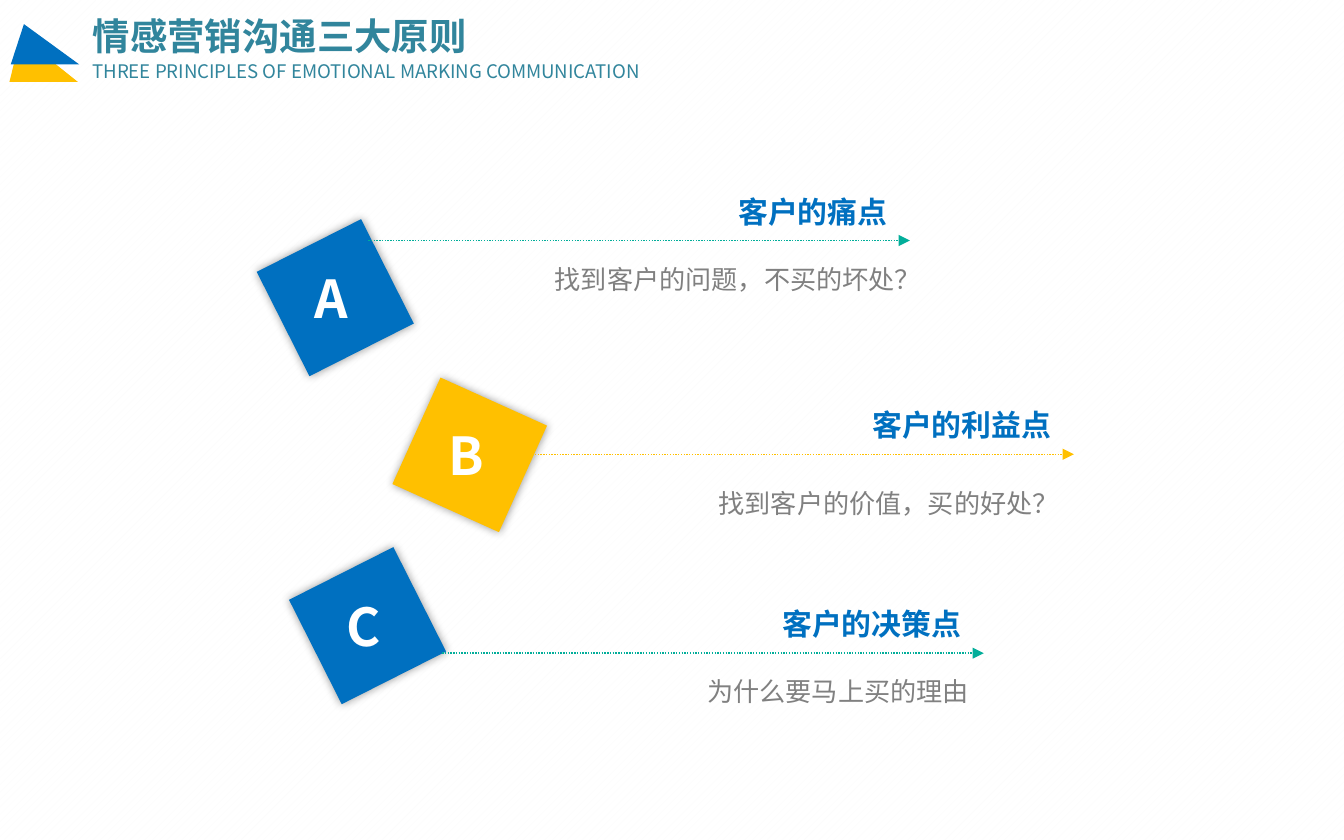
from pptx import Presentation
from pptx.util import Inches, Pt
from pptx.dml.color import RGBColor
from pptx.enum.dml import MSO_LINE, MSO_PATTERN
from pptx.enum.shapes import MSO_CONNECTOR, MSO_SHAPE
from pptx.enum.text import MSO_ANCHOR, MSO_AUTO_SIZE, PP_ALIGN
from pptx.oxml.ns import qn
from lxml.etree import SubElement

# Content
TITLE = "情感营销沟通三大原则"
SUB = "THREE PRINCIPLES OF EMOTIONAL MARKING COMMUNICATION"
# letter, head, note, colours of tile and arrow, tile corner, tilt,
# arrow start, gap from arrow to note
ITEMS = [
    ("A", "客户的痛点", "找到客户的问题，不买的坏处？",
     "blue", "green", (2.06, 1.78), -26.8, (2.74, 1.79), 0),
    ("B", "客户的利益点", "找到客户的价值，买的好处？",
     "gold", "gold", (3.06, 2.95), 24.3, (3.96, 3.38), 0.08),
    ("C", "客户的决策点", "为什么要马上买的理由",
     "blue", "green", (2.3, 4.22), -26.8, (3.29, 4.86), 0),
]
# colour, left, top, width, height, apex
MARKS = [
    ("gold", 0.07, 0.27, 0.51, 0.34, 0.165),
    ("blue", 0.08, 0.18, 0.51, 0.3, 0.193),
]

# Theme and sizes
THEME = {
    "font": "Noto Sans CJK SC",
    "blue": "0070C0", "gold": "FFC000", "green": "02AE9A",
    "teal": "31859C", "gray": "808080", "white": "FFFFFF", "pale": "FBFBFB",
    "title": 20, "sub": 10, "letter": 28, "head": 16, "note": 14,
}
TILE, REACH = 0.87, 4.03
HEAD_W, NOTE_W = 1.79, 2.92


def color(name):
    return RGBColor.from_string(THEME[name])


def write(box, text, role, tint, bold=False, align=PP_ALIGN.LEFT, space=1):
    frame = box.text_frame
    frame.text = text
    frame.word_wrap = True
    frame.auto_size = MSO_AUTO_SIZE.NONE
    frame.vertical_anchor = MSO_ANCHOR.TOP
    para = frame.paragraphs[0]
    para.alignment, para.line_spacing = align, space
    font = para.runs[0].font
    font.name, font.size, font.bold = THEME["font"], Pt(THEME[role]), bold
    font.color.rgb = color(tint)
    east = SubElement(font._element, qn("a:ea"))
    east.set("typeface", THEME["font"])


def label(area, *args, **style):
    box = slide.shapes.add_textbox(*map(Inches, area))
    write(box, *args, **style)


def block(kind, area, tint):
    shape = slide.shapes.add_shape(kind, *map(Inches, area))
    shape.shadow.inherit = False
    shape.fill.solid()
    shape.fill.fore_color.rgb = color(tint)
    shape.line.fill.background()
    return shape


def glow(shape):
    effects = shape._element.spPr.find(qn("a:effectLst"))
    shade = SubElement(effects, qn("a:outerShdw"), blurRad=str(Pt(5)),
                       dist="0", dir="0", algn="ctr", rotWithShape="0")
    black = SubElement(shade, qn("a:srgbClr"), val="000000")
    SubElement(black, qn("a:alpha"), val="40000")


def arrow(x, y, tint):
    line = slide.shapes.add_connector(
        MSO_CONNECTOR.STRAIGHT, *map(Inches, (x, y, x + REACH, y)))
    line.line.width = Pt(0.75)
    line.line.color.rgb = color(tint)
    line.line.dash_style = MSO_LINE.ROUND_DOT
    SubElement(line.line._get_or_add_ln(), qn("a:tailEnd"), type="triangle")
    SubElement(line._element.spPr, qn("a:effectLst"))


# Slide and background
deck = Presentation()
deck.slide_width, deck.slide_height = Inches(10), Inches(6.25)
slide = deck.slides.add_slide(deck.slide_layouts[5])
back = slide.background.fill
back.patterned()
back.pattern = MSO_PATTERN.WIDE_UPWARD_DIAGONAL
back.fore_color.rgb, back.back_color.rgb = color("pale"), color("white")

# Title, subtitle and corner mark
title = slide.shapes.title
title.left, title.top = Inches(0.59), Inches(0.05)
title.width, title.height = Inches(3.1), Inches(0.44)
write(title, TITLE, "title", "teal", bold=True)
label((0.59, 0.4, 4.63, 0.27), SUB, "sub", "teal")
for tint, *area, apex in MARKS:
    mark = block(MSO_SHAPE.ISOSCELES_TRIANGLE, area, tint)
    mark.adjustments[0] = apex

# Principles: tilted tile, arrow, head above and note below
for letter, head, note, fill, tint, (left, top), tilt, (x, y), gap in ITEMS:
    tile = block(MSO_SHAPE.RECTANGLE, (left, top, TILE, TILE), fill)
    tile.rotation = tilt
    glow(tile)
    label((left + 0.18, top + 0.15, 0.5, 0.57), letter, "letter", "white",
          bold=True)
    arrow(x, y, tint)
    end = x + REACH
    label((end - 0.07 - HEAD_W, y - 0.4, HEAD_W, 0.37), head, "head", "blue",
          bold=True, align=PP_ALIGN.RIGHT)
    label((end - 0.01 - NOTE_W, y + gap, NOTE_W, 0.45), note, "note", "gray",
          align=PP_ALIGN.RIGHT, space=1.5)

deck.save("out.pptx")
